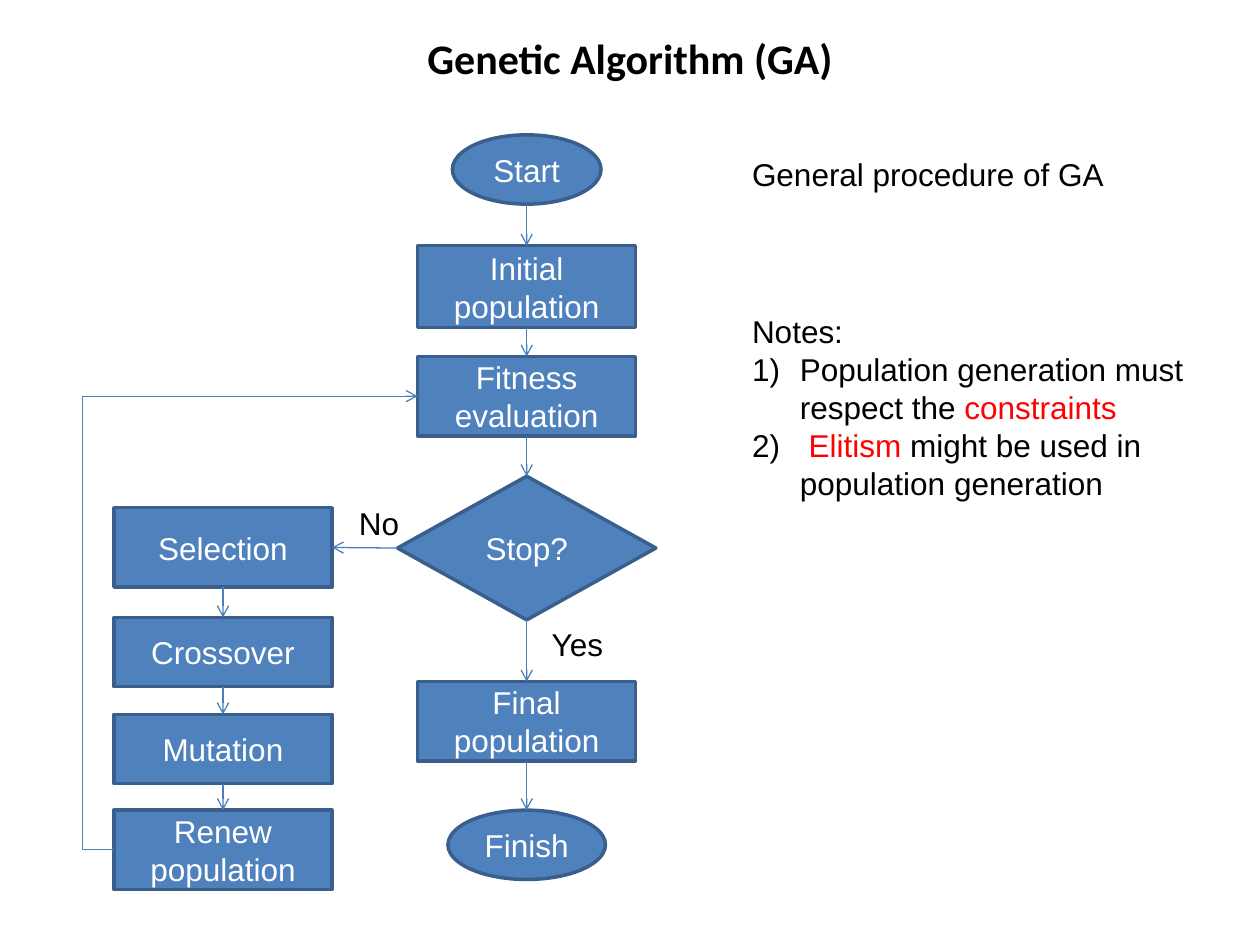
from lxml.etree import SubElement
from pptx import Presentation
from pptx.dml.color import RGBColor
from pptx.enum.shapes import MSO_CONNECTOR, MSO_SHAPE
from pptx.enum.text import MSO_ANCHOR, MSO_AUTO_SIZE, PP_ALIGN
from pptx.oxml.ns import qn
from pptx.util import Inches, Pt

COLORS = {
    "step": "4F81BD",
    "outline": "3A5F8C",
    "arrow": "4B7EBC",
    "light": "FFFFFF",
    "dark": "000000",
    "accent": "FF0000",
}
TOP, LEFT, BOTTOM = 0, 1, 2
SIDE_CENTER, MAIN_CENTER = 1.77, 4.18
STEP_WIDTH = 1.73


def rgb(name):
    """Look up a palette colour."""
    return RGBColor.from_string(COLORS[name])


def add_text(paragraph, text, color="dark", size=18, font="Arial", bold=False):
    """Append one formatted run to a paragraph."""
    run = paragraph.add_run()
    run.text = text
    run.font.name = font
    run.font.size = Pt(size)
    run.font.bold = bold
    run.font.color.rgb = rgb(color)


def add_title(slide, text):
    """Place and fill the title placeholder."""
    title = slide.shapes.title
    title.left, title.top = Inches(0.55), Inches(0.21)
    title.width, title.height = Inches(8.9), Inches(0.5)
    frame = title.text_frame
    frame.auto_size = MSO_AUTO_SIZE.NONE
    frame.vertical_anchor = MSO_ANCHOR.MIDDLE
    frame.paragraphs[0].alignment = PP_ALIGN.CENTER
    add_text(frame.paragraphs[0], text, size=24, font="Calibri", bold=True)


def add_step(slide, text, center, top, height, width=STEP_WIDTH, kind=MSO_SHAPE.RECTANGLE):
    """Draw one flowchart step centred on its column."""
    step = slide.shapes.add_shape(
        kind, Inches(center - width / 2), Inches(top), Inches(width), Inches(height)
    )
    step.shadow.inherit = False
    step.fill.solid()
    step.fill.fore_color.rgb = rgb("step")
    step.line.color.rgb = rgb("outline")
    step.line.width = Pt(2)
    frame = step.text_frame
    frame.word_wrap = True
    frame.vertical_anchor = MSO_ANCHOR.MIDDLE
    frame.paragraphs[0].alignment = PP_ALIGN.CENTER
    add_text(frame.paragraphs[0], text, color="light")
    return step


def side_point(step, side):
    """Return the middle of one side of a step."""
    if side == LEFT:
        return step.left, step.top + step.height // 2
    x = step.left + step.width // 2
    return x, step.top if side == TOP else step.top + step.height


def style_arrow(arrow):
    """Give a connector its line, open arrowhead and no shadow."""
    arrow.line.color.rgb = rgb("arrow")
    arrow.line.width = Pt(0.75)
    properties = arrow._element.spPr
    SubElement(properties.find(qn("a:ln")), qn("a:tailEnd"), type="arrow")
    SubElement(properties, qn("a:effectLst"))


def connect_down(slide, source, target):
    """Join the bottom of a step to the top of the next."""
    arrow = slide.shapes.add_connector(
        MSO_CONNECTOR.STRAIGHT, *side_point(source, BOTTOM), *side_point(target, TOP)
    )
    if source.auto_shape_type != MSO_SHAPE.OVAL:
        arrow.begin_connect(source, BOTTOM)
    arrow.end_connect(target, TOP)
    style_arrow(arrow)


def connect_left(slide, source, target):
    """Join the left of a step to the right of its neighbour."""
    arrow = slide.shapes.add_connector(MSO_CONNECTOR.STRAIGHT, 0, 0, 0, 0)
    arrow.begin_connect(source, LEFT)
    arrow.end_connect(target, 3)
    style_arrow(arrow)


def connect_loop(slide, source, target):
    """Lead a bent arrow around the left side back to an earlier step."""
    arrow = slide.shapes.add_connector(
        MSO_CONNECTOR.ELBOW, *side_point(source, LEFT), *side_point(target, LEFT)
    )
    arrow.begin_connect(source, LEFT)
    arrow.end_connect(target, LEFT)
    geometry = arrow._element.spPr.find(qn("a:prstGeom"))
    guides = geometry.find(qn("a:avLst"))
    if guides is None:
        guides = SubElement(geometry, qn("a:avLst"))
    SubElement(guides, qn("a:gd"), name="adj1", fmla="val -10400")
    style_arrow(arrow)


def add_label(slide, left, top, width, height, paragraphs, wrap=False):
    """Add a text box; each paragraph is a list of (text, color) pairs."""
    box = slide.shapes.add_textbox(Inches(left), Inches(top), Inches(width), Inches(height))
    frame = box.text_frame
    frame.word_wrap = wrap
    frame.auto_size = MSO_AUTO_SIZE.SHAPE_TO_FIT_TEXT
    for index, runs in enumerate(paragraphs):
        paragraph = frame.add_paragraph() if index else frame.paragraphs[0]
        for text, color in runs:
            add_text(paragraph, text, color)
    return frame


def number_paragraph(paragraph):
    """Number a paragraph as 1), 2) with a hanging indent."""
    properties = paragraph._p.get_or_add_pPr()
    properties.set("marL", str(Inches(0.38)))
    properties.set("indent", str(-Inches(0.38)))
    SubElement(properties, qn("a:buFont"), typeface="+mj-lt")
    SubElement(properties, qn("a:buAutoNum"), type="arabicParenR")


def add_flowchart(slide):
    """Draw the steps, arrows and branch labels."""
    selection, crossover, mutation, renewal = breeding = [
        add_step(slide, text, SIDE_CENTER, top, height)
        for text, top, height in (
            ("Selection", 4.03, 0.63),
            ("Crossover", 4.9, 0.55),
            ("Mutation", 5.67, 0.55),
            ("Renew population", 6.43, 0.63),
        )
    ]
    start, initial, fitness, decision, final, finish = main_flow = [
        add_step(slide, text, MAIN_CENTER, top, height, width, kind)
        for text, top, height, width, kind in (
            ("Start", 1.07, 0.55, 1.18, MSO_SHAPE.OVAL),
            ("Initial population", 1.95, 0.65, STEP_WIDTH, MSO_SHAPE.RECTANGLE),
            ("Fitness evaluation", 2.83, 0.63, STEP_WIDTH, MSO_SHAPE.RECTANGLE),
            ("Stop?", 3.78, 1.14, 2.05, MSO_SHAPE.FLOWCHART_DECISION),
            ("Final population", 5.41, 0.63, STEP_WIDTH, MSO_SHAPE.RECTANGLE),
            ("Finish", 6.43, 0.55, 1.25, MSO_SHAPE.OVAL),
        )
    ]
    for flow in (breeding, main_flow):
        for source, target in zip(flow, flow[1:]):
            connect_down(slide, source, target)
    connect_left(slide, decision, selection)
    connect_loop(slide, renewal, fitness)
    add_label(slide, 4.28, 4.91, 0.61, 0.4, [[("Yes", "dark")]])
    add_label(slide, 2.75, 3.95, 0.52, 0.4, [[("No", "dark")]])


def add_notes(slide):
    """Write the caption and the numbered remarks."""
    add_label(slide, 5.87, 1.18, 3.02, 0.4, [[("General procedure of GA", "dark")]])
    remarks = add_label(slide, 5.87, 2.43, 3.78, 1.92, [
        [("Notes:", "dark")],
        [("Population generation must respect the ", "dark"), ("constraints", "accent")],
        [(" ", "dark"), ("Elitism", "accent"),
         (" might be used in population generation", "dark")],
    ], wrap=True)
    for paragraph in remarks.paragraphs[1:]:
        number_paragraph(paragraph)


def main():
    """Build and save the slide."""
    deck = Presentation()
    deck.slide_width, deck.slide_height = Inches(10), Inches(7.5)
    slide = deck.slides.add_slide(deck.slide_layouts[5])
    add_title(slide, "Genetic Algorithm (GA)")
    add_flowchart(slide)
    add_notes(slide)
    deck.save("out.pptx")


if __name__ == "__main__":
    main()
